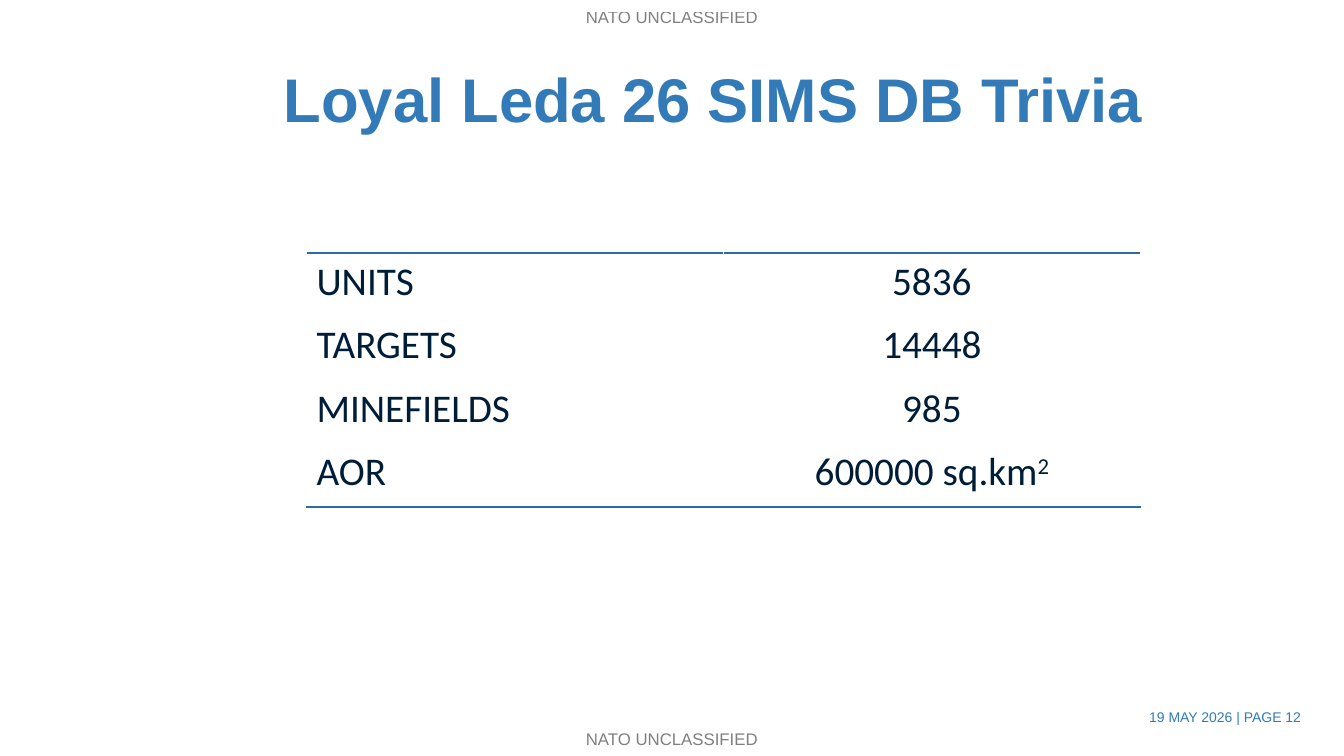
from dataclasses import dataclass

from lxml import etree
from pptx import Presentation
from pptx import util as u
from pptx.dml.color import RGBColor
from pptx.enum import text as t
from pptx.oxml import ns

WIDE, HIGH = u.Inches(13.33), u.Inches(7.5)


@dataclass(frozen=True)
class Theme:
    blue: str = "327BB8"
    navy: str = "001D38"
    rule: str = "2C6CA0"
    black: str = "000000"
    head: str = "Arial"
    body: str = "Calibri"
    title: int = 44
    cell: int = 28
    mark: int = 12
    foot: int = 10


@dataclass(frozen=True)
class Box:
    """Left, top, width and height in percent of the slide."""
    left: float
    top: float
    wide: float
    high: float

    def emu(self) -> tuple[int, int, int, int]:
        return (round(WIDE * self.left / 100), round(HIGH * self.top / 100),
                round(WIDE * self.wide / 100), round(HIGH * self.high / 100))


@dataclass(frozen=True)
class Label:
    words: str
    box: Box
    size: int
    color: str
    align: t.PP_ALIGN = t.PP_ALIGN.LEFT
    anchor: t.MSO_ANCHOR = t.MSO_ANCHOR.MIDDLE
    bold: bool = False
    space: float = 1.0
    alpha: int = 100
    inset: bool = True


@dataclass(frozen=True)
class Fact:
    name: str
    value: str
    power: str = ""


THEME = Theme()


def mark(top: float) -> Label:
    return Label("NATO UNCLASSIFIED", Box(43.59, top, 13.28, 2.67), THEME.mark,
                 THEME.black, anchor=t.MSO_ANCHOR.TOP, alpha=50, inset=False)


LABELS = [
    mark(0.93),
    mark(96.4),
    Label("Loyal Leda 26 SIMS DB Trivia", Box(9.98, 3.87, 86.27, 19.33),
          THEME.title, THEME.blue, t.PP_ALIGN.CENTER, bold=True, space=0.9),
    Label("19 MAY 2026 | PAGE 12", Box(75.02, 92.13, 22.51, 5.33),
          THEME.foot, THEME.blue, t.PP_ALIGN.RIGHT),
]
FACTS = [
    Fact("UNITS", "5836"),
    Fact("TARGETS", "14448"),
    Fact("MINEFIELDS", "985"),
    Fact("AOR", "600000 sq.km", "2"),
]
GRID = Box(22.81, 33.47, 62.04, 33.6)


def style(run, face: str, size: int, color: str, bold: bool = False) -> None:
    run.font.name = face
    run.font.size = u.Pt(size)
    run.font.bold = bold
    run.font.color.rgb = RGBColor.from_string(color)


def put_label(slide, item: Label) -> None:
    frame = slide.shapes.add_textbox(*item.box.emu()).text_frame
    frame.word_wrap = True
    frame.vertical_anchor = item.anchor
    if not item.inset:
        frame.margin_left = frame.margin_right = 0
        frame.margin_top = frame.margin_bottom = 0
    frame.text = item.words
    para = frame.paragraphs[0]
    para.alignment = item.align
    para.line_spacing = item.space
    run = para.runs[0]
    style(run, THEME.head, item.size, item.color, item.bold)
    if item.alpha < 100:
        tint = run.font.fill._xPr.find(".//" + ns.qn("a:srgbClr"))
        etree.SubElement(tint, ns.qn("a:alpha")).set("val", str(item.alpha * 1000))


def put_rule(cell, side: str) -> None:
    """Draw a one-point border on a side of the cell (T or B)."""
    line = etree.Element(ns.qn(f"a:ln{side}"), w=str(u.Pt(1)))
    fill = etree.SubElement(line, ns.qn("a:solidFill"))
    etree.SubElement(fill, ns.qn("a:srgbClr"), val=THEME.rule)
    cell._tc.get_or_add_tcPr().insert(0, line)


def put_facts(slide, facts: list[Fact], box: Box) -> None:
    table = slide.shapes.add_table(len(facts), 2, *box.emu()).table
    table.first_row = table.horz_banding = False
    for row, fact in enumerate(facts):
        for col, words in enumerate((fact.name, fact.value)):
            cell = table.cell(row, col)
            cell.fill.background()
            cell.text_frame.text = words
            para = cell.text_frame.paragraphs[0]
            if col == 1:
                para.alignment = t.PP_ALIGN.CENTER
                if fact.power:
                    high = para.add_run()
                    high.text = fact.power
                    high._r.get_or_add_rPr().set("baseline", "30000")
            for run in para.runs:
                style(run, THEME.body, THEME.cell, THEME.navy)
            # Rules close the table above and below
            if row == 0:
                put_rule(cell, "T")
            if row == len(facts) - 1:
                put_rule(cell, "B")


def main() -> None:
    deck = Presentation()
    deck.slide_width, deck.slide_height = WIDE, HIGH
    slide = deck.slides.add_slide(deck.slide_layouts[6])
    # Markings, title and footer
    for item in LABELS:
        put_label(slide, item)
    # Database figures
    put_facts(slide, FACTS, GRID)
    deck.save("out.pptx")


if __name__ == "__main__":
    main()
